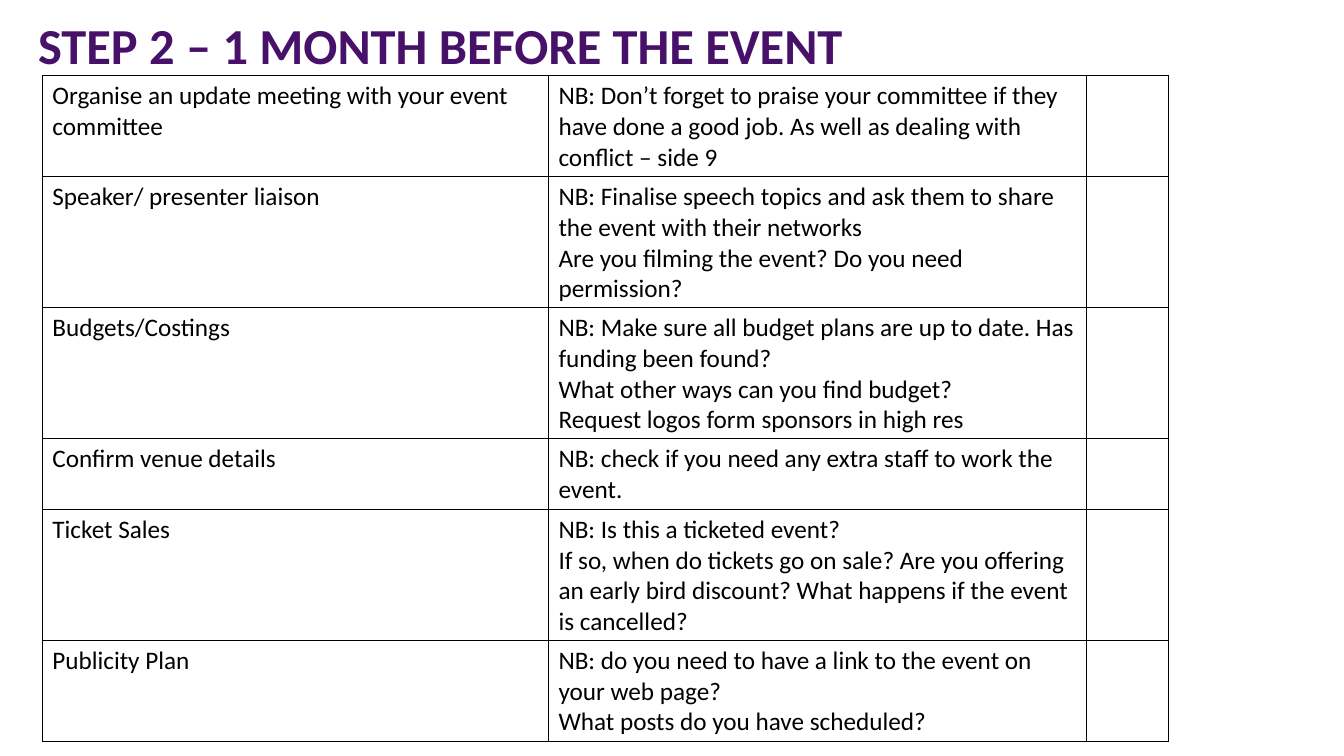
from dataclasses import dataclass

from lxml.etree import SubElement
from pptx import Presentation
from pptx.dml.color import RGBColor
from pptx.enum.text import MSO_ANCHOR
from pptx.oxml.ns import qn
from pptx.util import Inches, Pt


@dataclass(frozen=True)
class Theme:
    font: str = "Calibri"
    title_color: str = "471069"
    text_color: str = "000000"
    border_color: str = "000000"
    title_size: int = 36
    text_size: int = 18
    border_width: int = 1


@dataclass(frozen=True)
class Box:
    left: float
    top: float
    width: float
    height: float

    def lengths(self):
        return [Inches(value) for value in (self.left, self.top, self.width, self.height)]


THEME = Theme()
TITLE_FORMAT = {"name": THEME.font, "size": Pt(THEME.title_size), "bold": True}
TEXT_FORMAT = {"name": THEME.font, "size": Pt(THEME.text_size), "bold": False}

TITLE = "STEP 2 – 1 MONTH BEFORE THE EVENT"
COLUMN_WIDTHS = [5.02, 5.34, 0.81]
ROW_HEIGHTS = [0.99] + [0.41] * 5
TASKS = [
    ("Organise an update meeting with your event committee",
     ["NB: Don’t forget to praise your committee if they have done a good job. "
      "As well as dealing with conflict – side 9"]),
    ("Speaker/ presenter liaison",
     ["NB: Finalise speech topics and ask them to share the event with their networks",
      "Are you filming the event? Do you need permission?"]),
    ("Budgets/Costings",
     ["NB: Make sure all budget plans are up to date. Has funding been found?",
      "What other ways can you find budget?",
      "Request logos form sponsors in high res"]),
    ("Confirm venue details",
     ["NB: check if you need any extra staff to work the event."]),
    ("Ticket Sales",
     ["NB: Is this a ticketed event?",
      "If so, when do tickets go on sale? Are you offering an early bird discount? "
      "What happens if the event is cancelled?"]),
    ("Publicity Plan",
     ["NB: do you need to have a link to the event on your web page?",
      "What posts do you have scheduled?"]),
]


def write_paragraphs(frame, lines, font_format, color):
    for index, line in enumerate(lines):
        para = frame.paragraphs[0] if index == 0 else frame.add_paragraph()
        span = para.add_run()
        span.text = line
        for name, value in font_format.items():
            setattr(span.font, name, value)
        span.font.color.rgb = RGBColor.from_string(color)


def add_borders(cell):
    properties = cell._tc.get_or_add_tcPr()
    for side in ("lnL", "lnR", "lnT", "lnB"):
        line = SubElement(properties, qn(f"a:{side}"), w=str(Pt(THEME.border_width)))
        fill = SubElement(line, qn("a:solidFill"))
        SubElement(fill, qn("a:srgbClr"), val=THEME.border_color)


def add_title(page, box):
    frame = page.shapes.add_textbox(*box.lengths()).text_frame
    frame.word_wrap = True
    frame.vertical_anchor = MSO_ANCHOR.MIDDLE
    write_paragraphs(frame, [TITLE], TITLE_FORMAT, THEME.title_color)


def add_checklist(page, box):
    table = page.shapes.add_table(len(TASKS), len(COLUMN_WIDTHS), *box.lengths()).table
    table.first_row = False
    table.horz_banding = False
    for column, width in zip(table.columns, COLUMN_WIDTHS):
        column.width = Inches(width)
    for row, height, (task, notes) in zip(table.rows, ROW_HEIGHTS, TASKS):
        row.height = Inches(height)
        for cell, lines in zip(row.cells, ([task], notes, [])):
            add_borders(cell)
            cell.fill.background()
            write_paragraphs(cell.text_frame, lines, TEXT_FORMAT, THEME.text_color)


def main():
    deck = Presentation()
    deck.slide_width = Inches(13.33)
    deck.slide_height = Inches(7.5)
    page = deck.slides.add_slide(deck.slide_layouts[6])
    add_title(page, Box(0.28, -0.19, 12, 1.25))
    add_checklist(page, Box(0.42, 0.75, sum(COLUMN_WIDTHS), sum(ROW_HEIGHTS)))
    deck.save("out.pptx")


if __name__ == "__main__":
    main()
